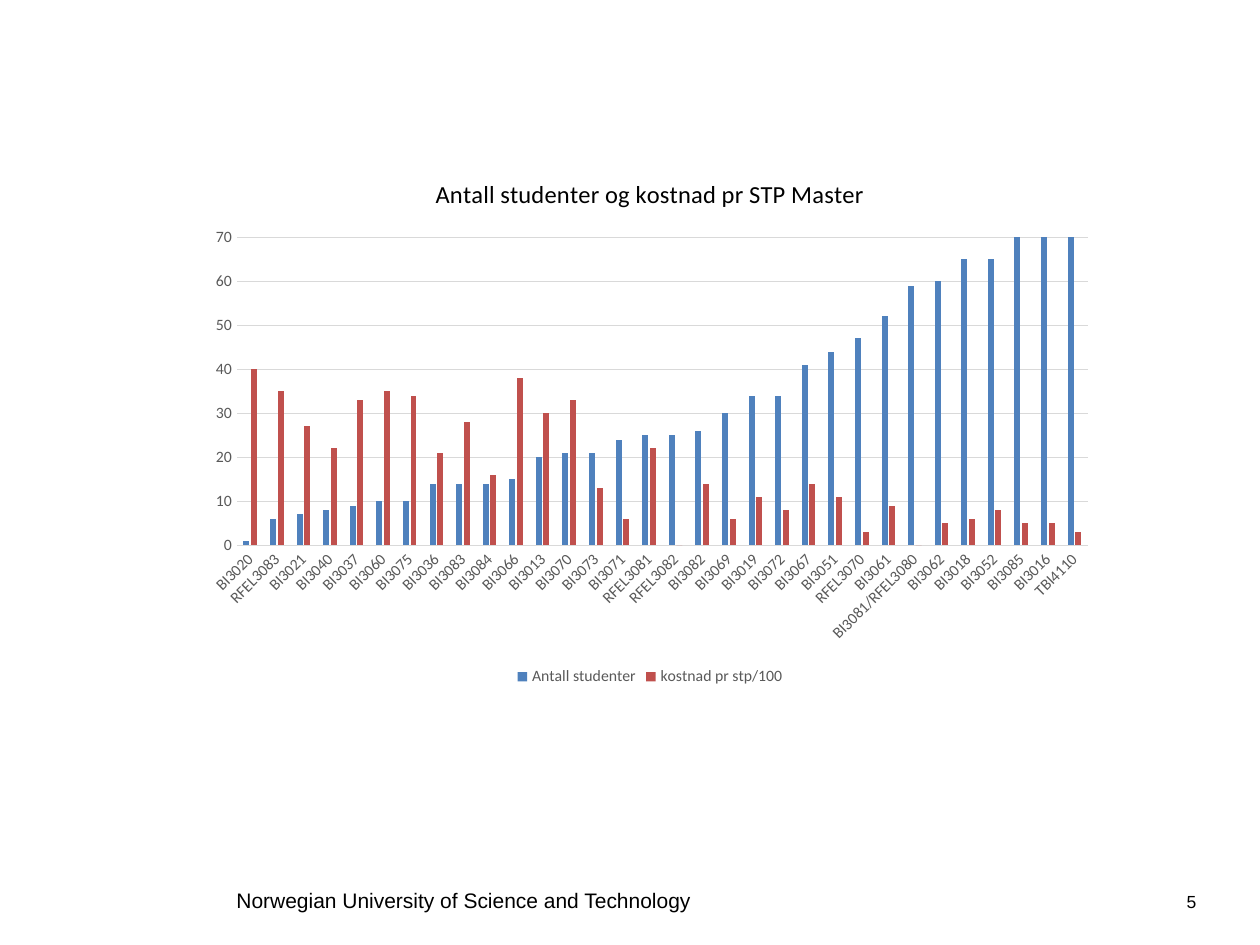
"""Build a slide with a clustered column chart of students and cost per course."""
from pptx import Presentation
from pptx.chart.data import CategoryChartData
from pptx.dml.color import RGBColor
from pptx.enum.chart import XL_CHART_TYPE, XL_LEGEND_POSITION, XL_TICK_MARK
from pptx.enum.text import PP_ALIGN
from pptx.oxml.ns import qn
from pptx.util import Emu, Pt

COLUMNS = XL_CHART_TYPE.COLUMN_CLUSTERED
LEGEND_BOTTOM = XL_LEGEND_POSITION.BOTTOM
NO_TICK = XL_TICK_MARK.NONE
LEFT, CENTER = PP_ALIGN.LEFT, PP_ALIGN.CENTER
PX = 914400 / 126
BLACK, GREY, GRID = "000000", "595959", "D9D9D9"

CHART_TITLE = "Antall studenter og kostnad pr STP Master"
CHART_BOX = (194, 155, 912, 536)
COURSES = [
    ("BI3020", 1, 40), ("RFEL3083", 6, 35), ("BI3021", 7, 27), ("BI3040", 8, 22),
    ("BI3037", 9, 33), ("BI3060", 10, 35), ("BI3075", 10, 34), ("BI3036", 14, 21),
    ("BI3083", 14, 28), ("BI3084", 14, 16), ("BI3066", 15, 38), ("BI3013", 20, 30),
    ("BI3070", 21, 33), ("BI3073", 21, 13), ("BI3071", 24, 6), ("RFEL3081", 25, 22),
    ("RFEL3082", 25, 0), ("BI3082", 26, 14), ("BI3069", 30, 6), ("BI3019", 34, 11),
    ("BI3072", 34, 8), ("BI3067", 41, 14), ("BI3051", 44, 11), ("RFEL3070", 47, 3),
    ("BI3061", 52, 9), ("BI3081/RFEL3080", 59, 0), ("BI3062", 60, 5), ("BI3018", 65, 6),
    ("BI3052", 65, 8), ("BI3085", 70, 5), ("BI3016", 100, 5), ("TBI4110", 107, 3),
]
SERIES = [("Antall studenter", "4F81BD"), ("kostnad pr stp/100", "C0504D")]
FOOTERS = [
    ("Norwegian University of Science and Technology", (224, 881, 525, 38), 12, LEFT),
    ("5", (1168, 885, 47, 50), 10, CENTER),
]


def px(*lengths):
    return [Emu(round(length * PX)) for length in lengths]


def rgb(color):
    return RGBColor.from_string(color)


def style_font(font, name, size, color):
    font.name, font.size, font.bold = name, Pt(size), False
    font.color.rgb = rgb(color)


def style_line(line, color):
    line.color.rgb = rgb(color)
    line.width = Pt(0.75)


def add_footer(slide, text, box, size, align):
    frame = slide.shapes.add_textbox(*px(*box)).text_frame
    frame.word_wrap = True
    frame.text = text
    frame.paragraphs[0].alignment = align
    style_font(frame.paragraphs[0].runs[0].font, "Arial", size, BLACK)


def add_course_chart(slide):
    names, *columns = zip(*COURSES)
    data = CategoryChartData()
    data.categories = names
    for (name, _), values in zip(SERIES, columns):
        data.add_series(name, values)
    chart = slide.shapes.add_chart(COLUMNS, *px(*CHART_BOX), data).chart
    style_font(chart.font, "Calibri", 10, BLACK)

    chart.has_title = True
    title = chart.chart_title
    title.include_in_layout = False
    title.text_frame.text = CHART_TITLE
    style_font(title.text_frame.paragraphs[0].runs[0].font, "Calibri", 14, BLACK)

    chart.has_legend = True
    chart.legend.position = LEGEND_BOTTOM
    chart.legend.include_in_layout = False
    style_font(chart.legend.font, "Calibri", 9, GREY)

    plot = chart.plots[0]
    plot.gap_width, plot.overlap, plot.vary_by_categories = 219, -27, False
    for series, (_, color) in zip(plot.series, SERIES):
        series.format.fill.solid()
        series.format.fill.fore_color.rgb = rgb(color)

    courses, amounts = chart.category_axis, chart.value_axis
    for axis in (courses, amounts):
        axis.major_tick_mark = axis.minor_tick_mark = NO_TICK
        style_font(axis.tick_labels.font, "Calibri", 9, GREY)
    style_line(courses.format.line, GRID)
    labels = courses._element.find(qn("c:txPr"))
    labels.find(qn("a:bodyPr")).set("rot", "-2700000")
    amounts.minimum_scale, amounts.maximum_scale, amounts.major_unit = 0, 70, 10
    amounts.format.line.fill.background()
    style_line(amounts.major_gridlines.format.line, GRID)


def main():
    deck = Presentation()
    deck.slide_width, deck.slide_height = px(1260, 945)
    slide = deck.slides.add_slide(deck.slide_layouts[6])
    for footer in FOOTERS:
        add_footer(slide, *footer)
    add_course_chart(slide)
    deck.save("out.pptx")


if __name__ == "__main__":
    main()
